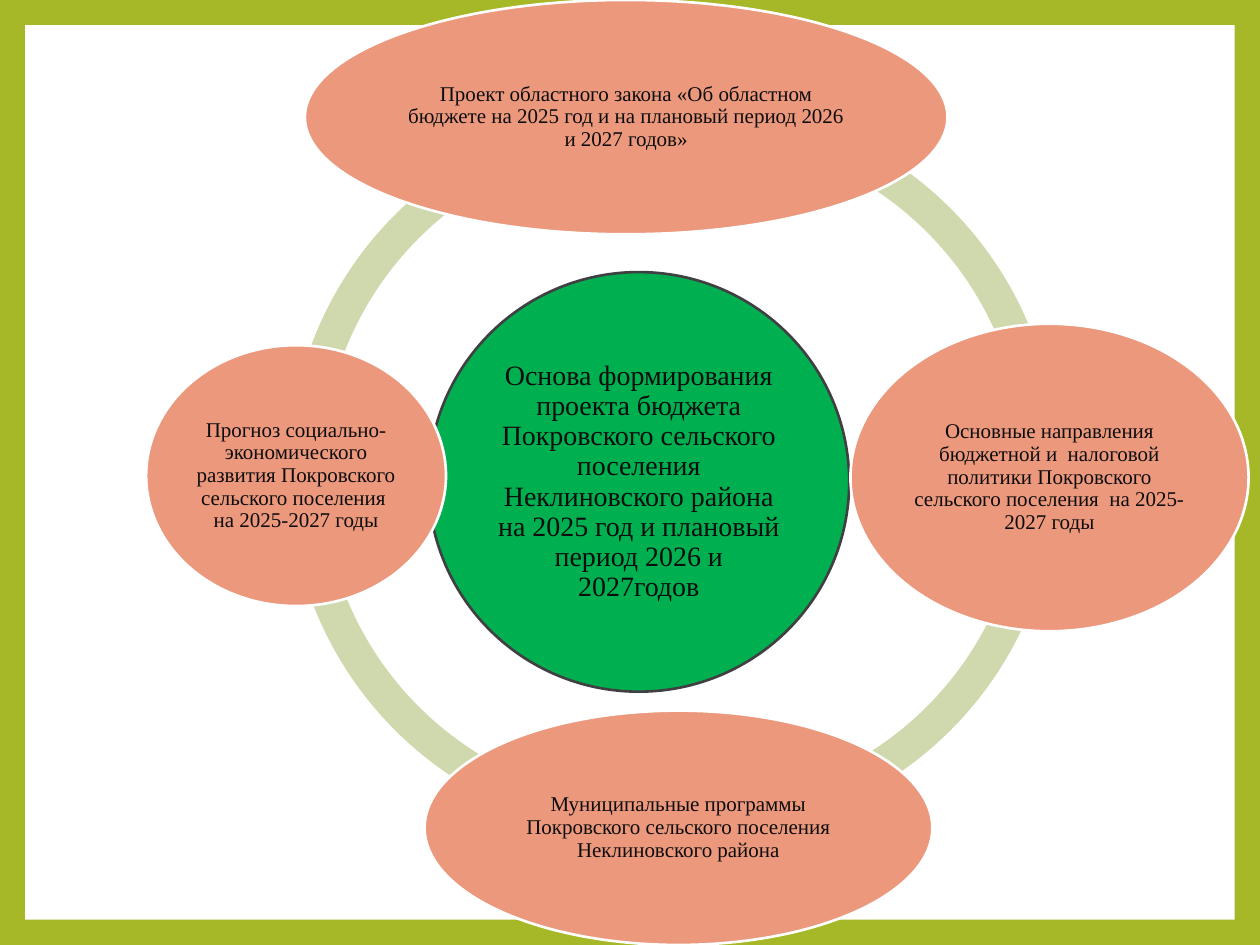
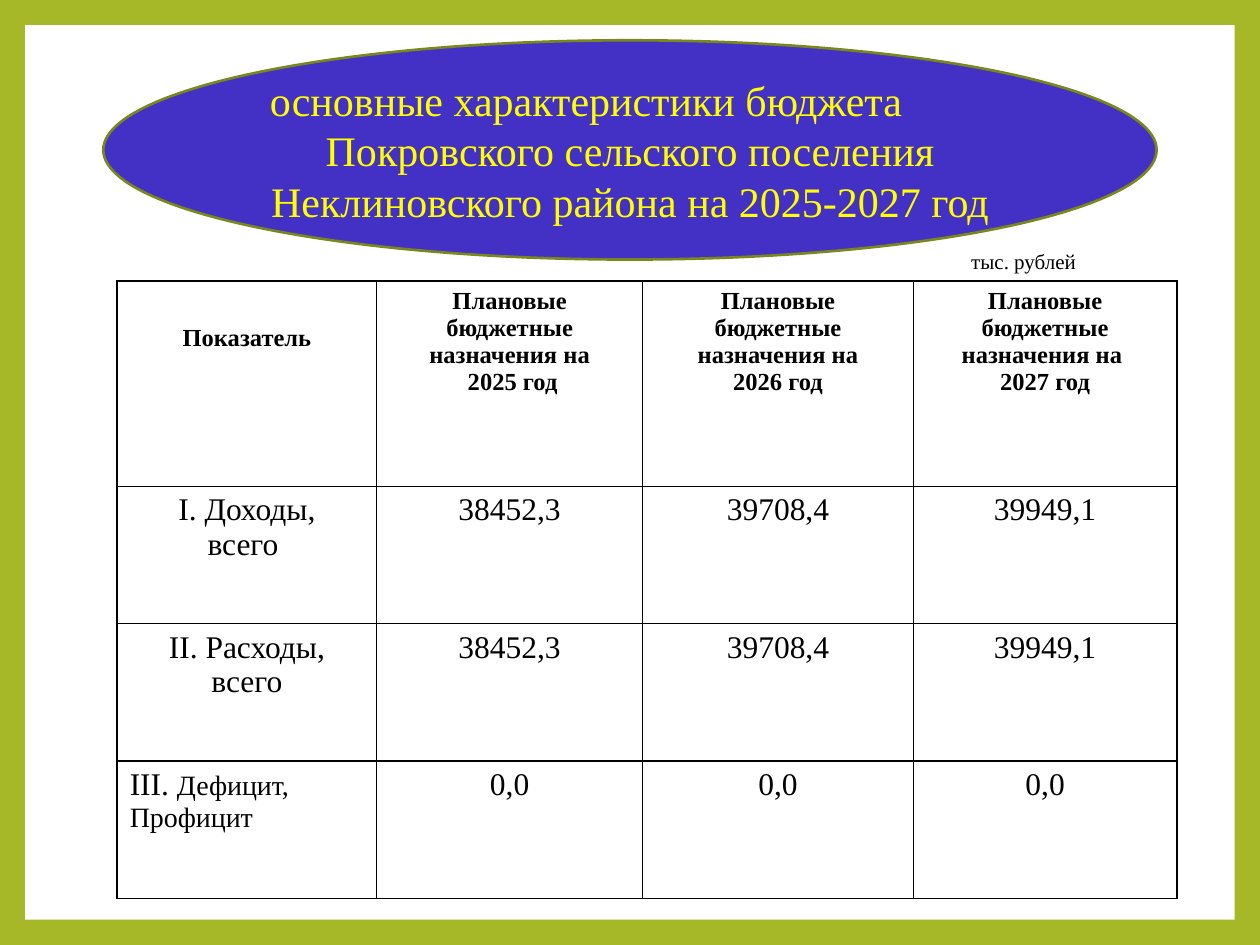
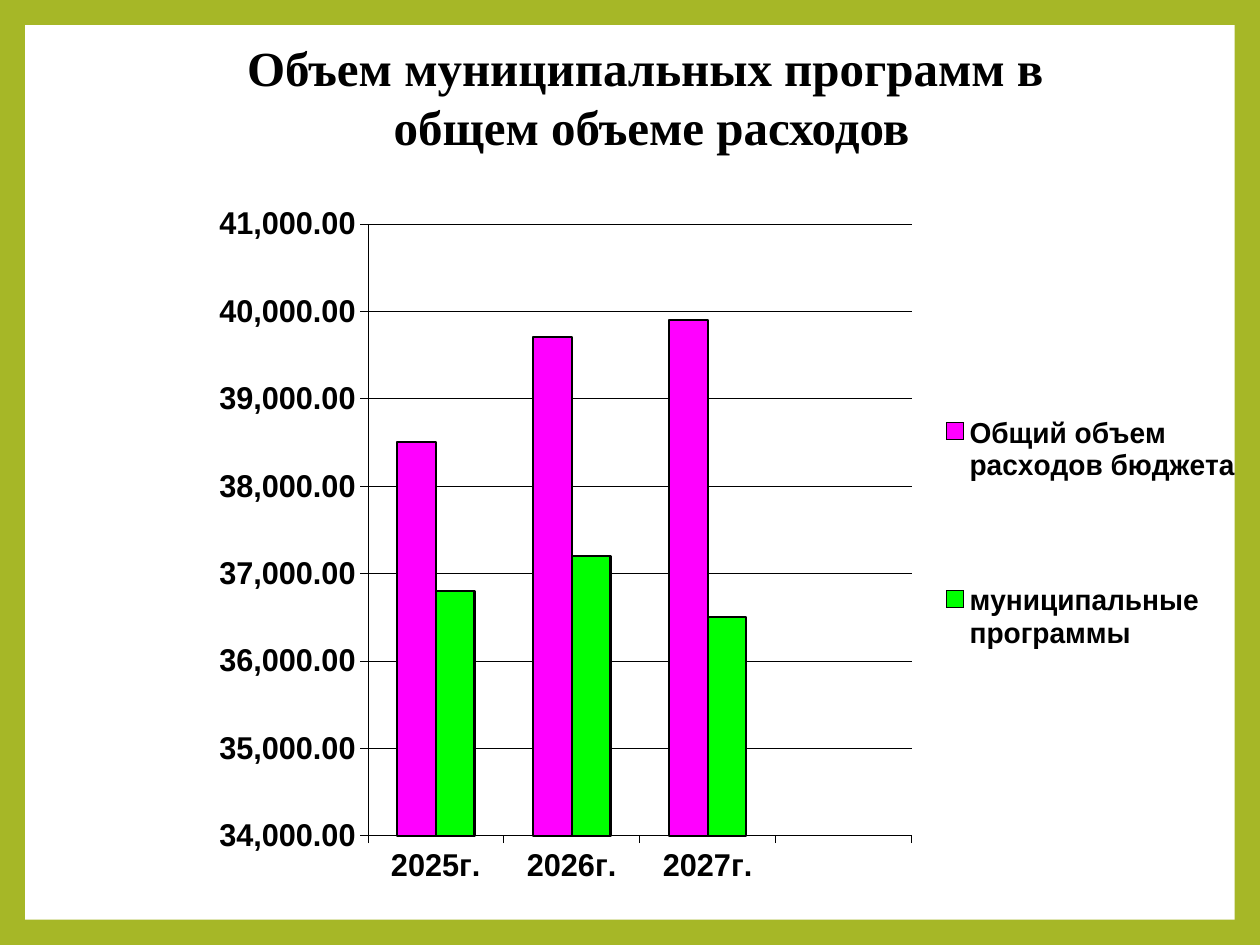
from dataclasses import dataclass

from lxml import etree
from pptx import Presentation
from pptx.chart.data import CategoryChartData
from pptx.dml.color import RGBColor
from pptx.enum import chart as charts, shapes, text
from pptx.oxml import parse_xml
from pptx.oxml.ns import nsdecls, qn
from pptx.util import Inches, Pt


@dataclass(frozen=True)
class Theme:
    frame: str = "A6B727"
    white: str = "FFFFFF"
    black: str = "000000"
    ink: str = "0D0D0D"
    ring: str = "D0D8AD"
    hub: str = "00B050"
    hub_line: str = "404042"
    petal: str = "EC987D"
    banner: str = "4331C5"
    banner_line: str = "7B871D"
    banner_text: str = "FFFF00"
    total: str = "FF00FF"
    programs: str = "00FF00"
    serif: str = "Times New Roman"
    sans: str = "Arial"
    title: int = 28
    heading: int = 24
    body: int = 18
    legend: float = 16.5
    lead: int = 16
    header: int = 14
    small: int = 12


theme = Theme()


def style(font, size, color, name=theme.serif, bold=False):
    font.size, font.name, font.bold = Pt(size), name, bold
    font.color.rgb = RGBColor.from_string(color)


def add_figure(page, kind, place, fill, line=None, words="", size=theme.small,
               color=theme.ink, spacing=0.9, inset=(0.02, 0.02)):
    """Add a filled preset shape with optional outline and centred text."""
    figure = page.shapes.add_shape(kind, *map(Inches, place))
    figure.shadow.inherit = False
    figure.fill.solid()
    figure.fill.fore_color.rgb = RGBColor.from_string(fill)
    if line:
        figure.line.color.rgb = RGBColor.from_string(line)
        figure.line.width = Pt(1.5)
    else:
        figure.line.fill.background()
    if words:
        frame = figure.text_frame
        frame.word_wrap = True
        frame.vertical_anchor = text.MSO_ANCHOR.MIDDLE
        frame.margin_left = frame.margin_right = Inches(inset[0])
        frame.margin_top = frame.margin_bottom = Inches(inset[1])
        para = frame.paragraphs[0]
        para.alignment = text.PP_ALIGN.CENTER
        para.line_spacing = spacing
        span = para.add_run()
        span.text = words
        style(span.font, size, color)
    return figure


deck = Presentation()
deck.slide_width, deck.slide_height = Inches(10), Inches(7.5)
title_only, blank = deck.slide_layouts[5], deck.slide_layouts[6]
oval = shapes.MSO_SHAPE.OVAL

# Slide 1: what the draft budget is based on
page = deck.slides.add_slide(blank)

# The frame and the white panel belong to the master
master = deck.slide_master
master.background.fill.solid()
master.background.fill.fore_color.rgb = RGBColor.from_string(theme.frame)
panel = add_figure(page, shapes.MSO_SHAPE.RECTANGLE, (0.2, 0.2, 9.6, 7.1), theme.white)
master.shapes._spTree.insert(2, panel._element)

# Quarters of the ring, clockwise from the lower right; ovals cover the joints
quarters = [(2.62, 0.87), (2.29, 0.87), (2.29, 0.86), (2.62, 0.81)]
for index, (left, top) in enumerate(quarters):
    arc = add_figure(page, shapes.MSO_SHAPE.BLOCK_ARC, (left, top, 5.77, 5.77), theme.ring)
    # Angles are stored in 1/60000 degree, adjustments in 1/100000
    arc.adjustments[0] = index * 90 * 0.6
    arc.adjustments[1] = (index + 1) % 4 * 90 * 0.6
    arc.adjustments[2] = 0.046

add_figure(page, oval, (3.4, 2.16, 3.34, 3.33), theme.hub, theme.hub_line,
           "Основа формирования проекта бюджета Покровского сельского поселения "
           "Неклиновского района на 2025 год и плановый период 2026 и 2027годов",
           theme.lead)
petals = [
    ((2.42, 0, 5.1, 1.86),
     "Проект областного закона «Об областном бюджете на 2025 год "
     "и на плановый период 2026 и 2027 годов»"),
    ((6.75, 2.57, 3.16, 2.44),
     "Основные направления бюджетной и  налоговой политики Покровского "
     "сельского поселения  на 2025-2027 годы"),
    ((3.37, 5.64, 4.03, 1.86),
     "Муниципальные программы Покровского сельского поселения Неклиновского района"),
    ((1.16, 2.74, 2.38, 2.07),
     "Прогноз социально-экономического развития Покровского "
     "сельского поселения  на 2025-2027 годы"),
]
for place, words in petals:
    add_figure(page, oval, place, theme.petal, theme.white, words)

# Slide 2: main figures of the budget
page = deck.slides.add_slide(blank)
heads = "Плановые бюджетные назначения на"
rows = [
    [["Показатель"], [heads, " 2025 год"], [heads, "2026 год"], [heads + " ", "2027 год"]],
    [["I. Доходы,", "всего "], ["38452,3"], ["39708,4"], ["39949,1"]],
    [["II. Расходы, всего"], ["38452,3"], ["39708,4"], ["39949,1"]],
    [["III. |Дефицит,", "|Профицит"], ["0,0"], ["0,0"], ["0,0"]],
]
table = page.shapes.add_table(4, 4, *map(Inches, (0.93, 2.23, 8.41, 4.91))).table
table.first_row = table.horz_banding = False
for column, width in zip(table.columns, (2.06, 2.11, 2.15, 2.09)):
    column.width = Inches(width)
for row, height in zip(table.rows, (1.63, 1.09, 1.09, 1.09)):
    row.height = Inches(height)

for row_index, row in enumerate(rows):
    for column_index, lines in enumerate(row):
        cell = table.cell(row_index, column_index)
        cell.fill.background()
        for position, side in enumerate(("lnL", "lnR", "lnT", "lnB")):
            cell._tc.get_or_add_tcPr().insert(position, parse_xml(
                f'<a:{side} {nsdecls("a")} w="12700"><a:solidFill>'
                f'<a:srgbClr val="{theme.black}"/></a:solidFill></a:{side}>'))
        for line_index, line in enumerate(lines):
            frame = cell.text_frame
            para = frame.add_paragraph() if line_index else frame.paragraphs[0]
            # A bar in the text starts the smaller size
            if "|" not in line:
                para.alignment = text.PP_ALIGN.CENTER
            size = theme.body if row_index else theme.header
            for words, points in zip(line.split("|"), (size, theme.lead)):
                if words:
                    span = para.add_run()
                    span.text = words
                    style(span.font, points, theme.black, bold=row_index == 0)
table.cell(0, 0).margin_top = Inches(0.35)

banner = add_figure(page, oval, (0.82, 0.32, 8.36, 1.74), theme.banner, theme.banner_line,
                    "основные характеристики бюджета\tПокровского сельского поселения "
                    "Неклиновского района на 2025-2027 год",
                    theme.heading, theme.banner_text, 1.0, (0.1, 0.05))
banner.text_frame.paragraphs[0]._p.get_or_add_pPr().set("defTabSz", str(Inches(1)))

unit_box = page.shapes.add_textbox(*map(Inches, (7.61, 1.92, 1.05, 0.29)))
unit_box.text_frame.word_wrap = False
unit_box.text_frame.auto_size = text.MSO_AUTO_SIZE.SHAPE_TO_FIT_TEXT
span = unit_box.text_frame.paragraphs[0].add_run()
span.text = "тыс. рублей"
style(span.font, theme.small, theme.black)

# Slide 3: municipal programmes within total spending
page = deck.slides.add_slide(title_only)
title = page.shapes.title
title.left, title.top, title.width, title.height = map(Inches, (0.67, 0.25, 9, 1.25))
frame = title.text_frame
frame.auto_size = text.MSO_AUTO_SIZE.NONE
frame.vertical_anchor = text.MSO_ANCHOR.TOP
for index, words in enumerate(("Объем муниципальных программ в ", "общем объеме расходов")):
    para = frame.add_paragraph() if index else frame.paragraphs[0]
    para.alignment = text.PP_ALIGN.CENTER
    span = para.add_run()
    span.text = words
    style(span.font, theme.title, theme.black, bold=True)

data = CategoryChartData(number_format="#,##0.00")
data.categories = ["2025г.", "2026г.", "2027г.", ""]
data.add_series("Общий объем расходов бюджета", (38500, 39700, 39900, None))
data.add_series("муниципальные программы", (36800, 37200, 36500, None))
chart = page.shapes.add_chart(charts.XL_CHART_TYPE.COLUMN_CLUSTERED,
                              *map(Inches, (1.74, 1.5, 8.26, 5.88)), data).chart
chart.has_title = False
style(chart.font, theme.body, theme.black, theme.sans, True)
plot = chart.plots[0]
plot.gap_width, plot.overlap, plot.vary_by_categories = 150, 0, False
for series, color in zip(plot.series, (theme.total, theme.programs)):
    series.invert_if_negative = False
    series.format.fill.solid()
    series.format.fill.fore_color.rgb = RGBColor.from_string(color)
    series.format.line.color.rgb = RGBColor.from_string(theme.black)
    series.format.line.width = Pt(1.25)

values, years = chart.value_axis, chart.category_axis
values.minimum_scale, values.maximum_scale, values.major_unit = 34000, 41000, 1000
values.tick_labels.number_format = "#,##0.00"
values.tick_labels.number_format_is_linked = False
years.tick_label_position = charts.XL_TICK_LABEL_POSITION.LOW
values.has_major_gridlines = True
for axis in (values, years):
    axis.major_tick_mark = charts.XL_TICK_MARK.OUTSIDE
    style(axis.tick_labels.font, theme.body, theme.black, theme.sans, True)
for line in (values.format.line, years.format.line, values.major_gridlines.format.line):
    line.color.rgb = RGBColor.from_string(theme.black)
    line.width = Pt(0.25)

chart.has_legend = True
legend = chart.legend
legend.position = charts.XL_LEGEND_POSITION.RIGHT
legend.include_in_layout = False
style(legend.font, theme.legend, theme.black, theme.sans, True)

plot_area = chart._chartSpace.chart.plotArea
for part, index, target, place in (
        (plot_area, 0, "inner", (0.119, 0.047, 0.537, 0.826)),
        (legend._element, 1, None, (0.678, 0.17, 0.31, 0.59))):
    for old in part.findall(qn("c:layout")):
        part.remove(old)
    layout = parse_xml(f'<c:layout {nsdecls("c")}><c:manualLayout/></c:layout>')
    settings = [("layoutTarget", target)] if target else []
    settings += [("xMode", "edge"), ("yMode", "edge"), *zip("xywh", place)]
    for name, value in settings:
        etree.SubElement(layout[0], qn(f"c:{name}")).set("val", str(value))
    part.insert(index, layout)

deck.save("out.pptx")
